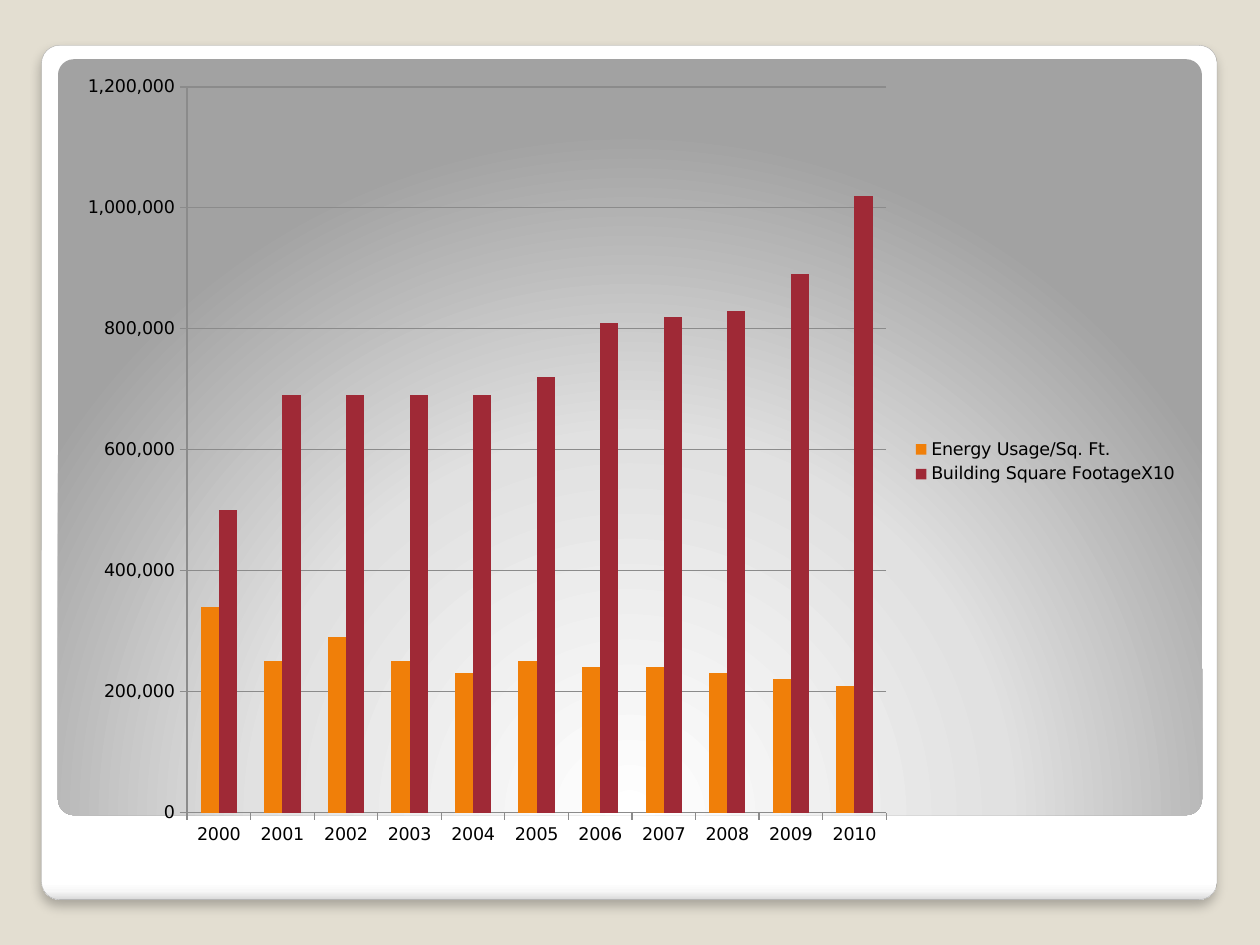
import pptx
import pptx.chart.data
import pptx.dml.color
import pptx.enum.chart
import pptx.enum.shapes
import pptx.oxml
import pptx.oxml.ns
import pptx.util
from lxml import etree

Inches = pptx.util.Inches
Pt = pptx.util.Pt
qn = pptx.oxml.ns.qn


def color(hex_code):
    return pptx.dml.color.RGBColor.from_string(hex_code)


def add_node(parent, tag, **attributes):
    return etree.SubElement(parent, qn(tag), {key: str(value) for key, value in attributes.items()})


class SlideBuilder:
    font = "DejaVu Sans"
    font_size = 10
    text_color = "000000"
    axis_color = "8B8B8B"

    def __init__(self, slide, background):
        self.slide = slide
        slide.background.fill.solid()
        slide.background.fill.fore_color.rgb = color(background)

    def panel(self, left, top, width, height, stops):
        panel = self.slide.shapes.add_shape(
            pptx.enum.shapes.MSO_SHAPE.ROUNDED_RECTANGLE,
            Inches(left), Inches(top), Inches(width), Inches(height))
        panel.adjustments[0] = 0.021
        panel.shadow.inherit = False
        panel.line.fill.background()
        panel.fill.gradient()
        gradient = panel._element.spPr.find(qn("a:gradFill"))
        gradient.clear()
        gradient.set("rotWithShape", "1")
        stop_list = add_node(gradient, "a:gsLst")
        for percent, hex_code in stops:
            stop = add_node(stop_list, "a:gs", pos=percent * 1000)
            add_node(stop, "a:srgbClr", val=hex_code)
        return panel, gradient

    def raised_panel(self, *box, stops):
        panel, gradient = self.panel(*box, stops)
        add_node(gradient, "a:lin", ang=5400000, scaled=0)
        panel.line.color.rgb = color("A4A4A4")
        panel.line.width = Pt(0.16)
        effects = panel._element.spPr.find(qn("a:effectLst"))
        shadow = add_node(effects, "a:outerShdw", blurRad=Pt(6), dist=Pt(4),
                          dir=5400000, algn="t", rotWithShape=0)
        shade = add_node(shadow, "a:srgbClr", val="000000")
        add_node(shade, "a:alpha", val=25000)

    def radial_panel(self, *box, stops):
        _, gradient = self.panel(*box, stops)
        circle = add_node(gradient, "a:path", path="circle")
        add_node(circle, "a:fillToRect", l=50000, t=175000, r=50000, b=-75000)

    def column_chart(self, left, top, width, height, categories, series, plot_box):
        chart_data = pptx.chart.data.CategoryChartData(number_format="#,##0")
        chart_data.categories = categories
        for name, values, _ in series:
            chart_data.add_series(name, values)
        chart = self.slide.shapes.add_chart(
            pptx.enum.chart.XL_CHART_TYPE.COLUMN_CLUSTERED,
            Inches(left), Inches(top), Inches(width), Inches(height), chart_data).chart
        chart.has_title = False
        chart.font.name = self.font
        chart.font.size = Pt(self.font_size)
        chart.font.color.rgb = color(self.text_color)
        chart.has_legend = True
        chart.legend.position = pptx.enum.chart.XL_LEGEND_POSITION.RIGHT
        chart.legend.include_in_layout = False

        columns = chart.plots[0]
        columns.gap_width = 150
        columns.overlap = 0
        columns.vary_by_categories = False
        for bars, (_, _, hex_code) in zip(columns.series, series):
            bars.format.fill.solid()
            bars.format.fill.fore_color.rgb = color(hex_code)
            bars.invert_if_negative = False

        scale = chart.value_axis
        scale.minimum_scale = 0
        scale.maximum_scale = 1200000
        scale.major_unit = 200000
        scale.has_major_gridlines = True
        scale.tick_labels.number_format = "#,##0"
        scale.tick_labels.number_format_is_linked = False
        for axis in (chart.category_axis, scale):
            axis.major_tick_mark = pptx.enum.chart.XL_TICK_MARK.OUTSIDE
            axis.minor_tick_mark = pptx.enum.chart.XL_TICK_MARK.NONE
        for line in (chart.category_axis.format.line, scale.format.line,
                     scale.major_gridlines.format.line):
            line.color.rgb = color(self.axis_color)
            line.width = Pt(0.75)
        self.place_plot(chart, plot_box)

    def place_plot(self, chart, plot_box):
        plot_area = chart._chartSpace.chart.plotArea
        for old_layout in plot_area.findall(qn("c:layout")):
            plot_area.remove(old_layout)
        layout = plot_area.makeelement(qn("c:layout"))
        plot_area.insert(0, layout)
        manual = add_node(layout, "c:manualLayout")
        add_node(manual, "c:layoutTarget", val="inner")
        add_node(manual, "c:xMode", val="edge")
        add_node(manual, "c:yMode", val="edge")
        for side, share in zip("xywh", plot_box):
            add_node(manual, f"c:{side}", val=share)


def main():
    presentation = pptx.Presentation()
    presentation.slide_width = Inches(10)
    presentation.slide_height = Inches(7.5)
    builder = SlideBuilder(
        presentation.slides.add_slide(presentation.slide_layouts[6]), "E3DED1")

    builder.raised_panel(
        0.33, 0.36, 9.33, 6.78,
        stops=[(0, "FFFFFF"), (98, "FFFFFF"), (99, "F7F7F7"), (100, "DADADA")])
    builder.radial_panel(
        0.46, 0.47, 9.08, 6,
        stops=[(0, "FFFFFF"), (55, "E1E1E1"), (100, "A2A2A2")])

    years = [str(year) for year in range(2000, 2011)]
    energy_usage = [340000, 250000, 290000, 250000, 230000, 250000,
                    240000, 240000, 230000, 220000, 210000]
    square_footage = [500000, 690000, 690000, 690000, 690000, 720000,
                      810000, 820000, 830000, 890000, 1020000]
    builder.column_chart(
        0.5, 0.5, 8.95, 6.33, years,
        [("Energy Usage/Sq. Ft.", energy_usage, "F07F09"),
         ("Building Square FootageX10", square_footage, "9F2936")],
        plot_box=(0.11, 0.03, 0.62, 0.91))

    presentation.save("out.pptx")


if __name__ == "__main__":
    main()
